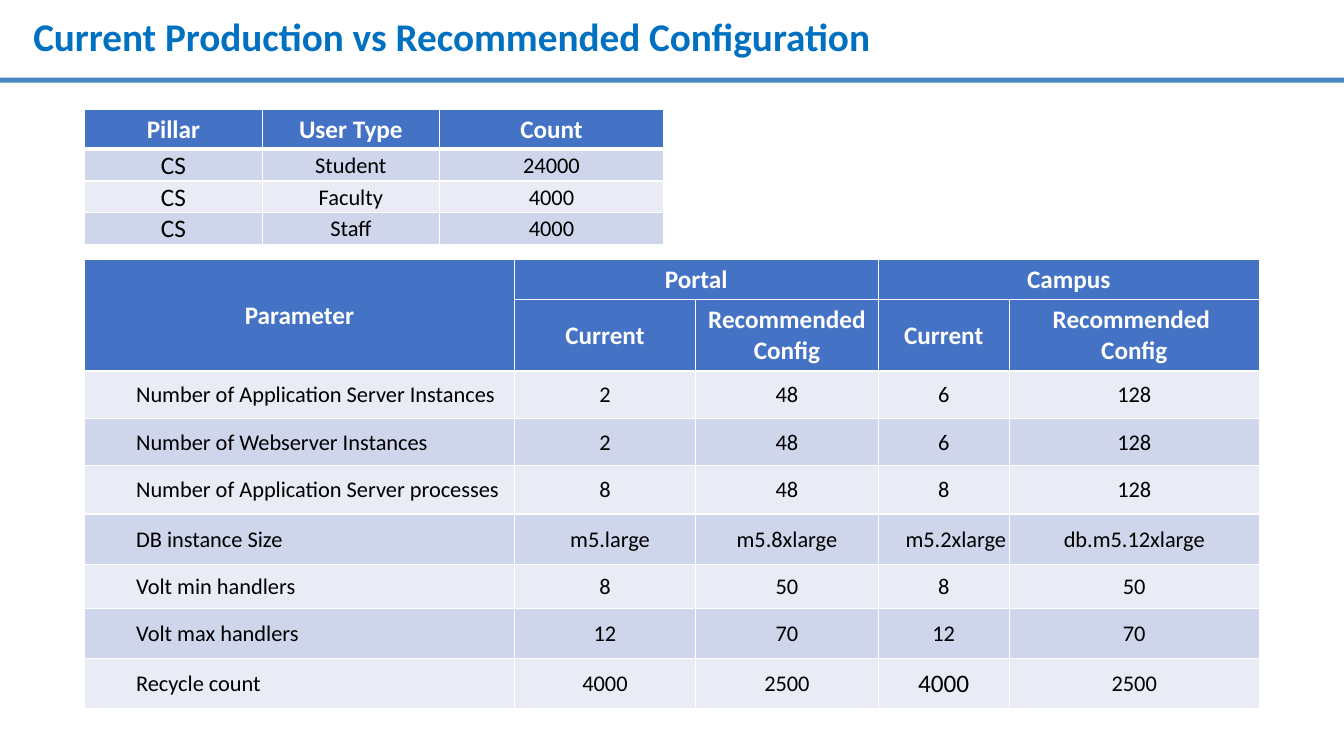
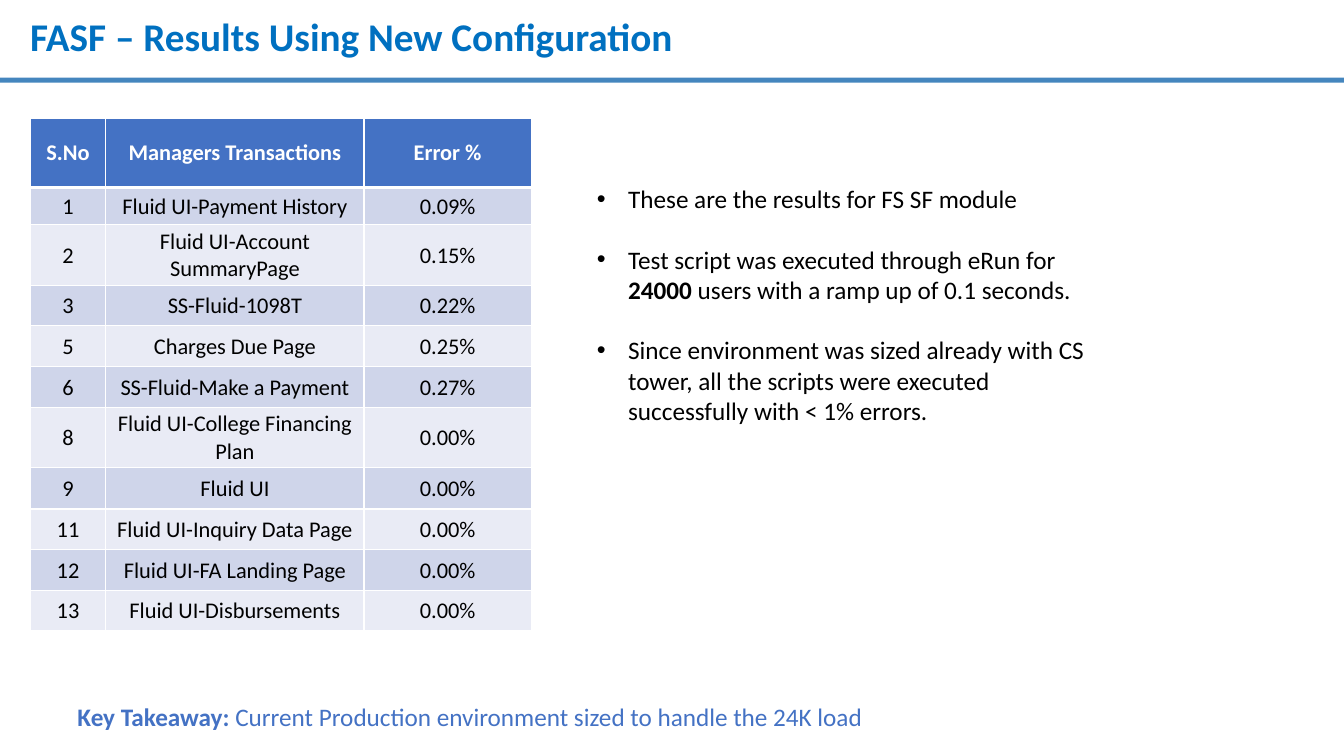
from dataclasses import dataclass

from lxml.etree import SubElement
from pptx import Presentation
from pptx.dml.color import RGBColor as RGB
from pptx.enum.shapes import MSO_SHAPE as SHAPE
from pptx.enum.text import MSO_ANCHOR as ANCHOR, MSO_AUTO_SIZE as AUTO, PP_ALIGN as ALIGN
from pptx.oxml.ns import qn
from pptx.util import Inches, Pt


@dataclass(frozen=True)
class Theme:
    font: str = "Calibri"
    title: RGB = RGB(0x00, 0x70, 0xC0)
    band: RGB = RGB(0x45, 0x86, 0xBE)
    accent: RGB = RGB(0x44, 0x72, 0xC4)
    stripe_dark: RGB = RGB(0xCF, 0xD5, 0xEA)
    stripe_light: RGB = RGB(0xE9, 0xEB, 0xF5)
    white: RGB = RGB(0xFF, 0xFF, 0xFF)
    black: RGB = RGB(0x00, 0x00, 0x00)
    title_size: int = 28
    text_size: int = 18
    cell_size: int = 16


THEME = Theme()
TITLE_ONLY, TITLE_AND_CONTENT = 5, 1

USER_COUNTS = [
    ("Pillar", "User Type", "Count"),
    ("CS", "Student", "24000"),
    ("CS", "Faculty", "4000"),
    ("CS", "Staff", "4000"),
]
CONFIGURATION = [
    ("Parameter", "Portal", "", "Campus", ""),
    ("", "Current", "Recommended Config", "Current", "Recommended \nConfig"),
    ("Number of Application Server Instances", "2", "48", "6", "128"),
    ("Number of Webserver Instances", "2", "48", "6", "128"),
    ("Number of Application Server processes", "8", "48", "8", "128"),
    ("DB instance Size", "m5.large", "m5.8xlarge", "m5.2xlarge", "db.m5.12xlarge"),
    ("Volt min handlers", "8", "50", "8", "50"),
    ("Volt max handlers", "12", "70", "12", "70"),
    ("Recycle count", "4000", "2500", "4000", "2500"),
]
ERROR_RATES = [
    ("S.No", "Managers Transactions", "Error %"),
    ("1", "Fluid UI-Payment History", "0.09%"),
    ("2", "Fluid UI-Account SummaryPage", "0.15%"),
    ("3", "SS-Fluid-1098T", "0.22%"),
    ("5", "Charges Due Page", "0.25%"),
    ("6", "SS-Fluid-Make a Payment", "0.27%"),
    ("8", "Fluid UI-College Financing Plan", "0.00%"),
    ("9", "Fluid UI", "0.00%"),
    ("11", "Fluid UI-Inquiry Data Page", "0.00%"),
    ("12", "Fluid UI-FA Landing Page", "0.00%"),
    ("13", "Fluid UI-Disbursements", "0.00%"),
]
# Each finding is a list of (text, bold) runs.
FINDINGS = [
    [("These are the results for FS SF module", False)],
    [("Test script was executed through eRun for ", False), ("24000", True),
     (" users with a ramp up of 0.1 seconds.", False)],
    [("Since environment was sized already with CS tower, all the scripts were "
      "executed successfully with < 1% errors.", False)],
]
TAKEAWAY = [("Key Takeaway: ", True),
            ("Current Production environment sized to handle the 24K load", False)]


def style(paragraph, size, color, bold=None):
    font = paragraph.font
    font.name, font.size, font.bold = THEME.font, Pt(size), bold
    font.color.rgb = color


def indent(paragraph, left, first=0):
    props = paragraph._p.get_or_add_pPr()
    props.set("marL", str(Inches(left)))
    props.set("indent", str(Inches(first)))
    return props


def add_runs(paragraph, runs):
    for text, bold in runs:
        run = paragraph.add_run()
        run.text = text
        run.font.bold = bold


def place(shape, box):
    shape.left, shape.top, shape.width, shape.height = map(Inches, box)


def add_master_header(prs, slide):
    """Draw the title band and its lower edge, and move both to the master."""
    bands = ((0.27, 0.55, THEME.band), (0, 0.77, THEME.white))
    for i, (top, height, color) in enumerate(bands):
        band = slide.shapes.add_shape(
            SHAPE.RECTANGLE, 0, Inches(top), prs.slide_width, Inches(height))
        band.shadow.inherit = False
        band.fill.solid()
        band.fill.fore_color.rgb = color
        band.line.fill.background()
        band.element.nvSpPr.cNvPr.set("id", str(50 + i))
        prs.slide_master.shapes.element.insert(2 + i, band.element)


def set_title(slide, text, left):
    title = slide.shapes.title
    place(title, (left, 0.11, 10.79, 0.56))
    frame = title.text_frame
    frame.text = text
    frame.auto_size = AUTO.NONE
    frame.vertical_anchor = ANCHOR.MIDDLE
    frame.margin_left = frame.margin_right = Inches(0.07)
    frame.margin_top = frame.margin_bottom = Inches(0.04)
    heading = frame.paragraphs[0]
    heading.alignment = ALIGN.LEFT
    heading.line_spacing = 0.9
    style(heading, THEME.title_size, THEME.title, True)


def add_borders(cell, bottom):
    props = cell._tc.get_or_add_tcPr()
    for side, width in (("L", 1), ("R", 1), ("T", 1), ("B", bottom)):
        line = SubElement(props, qn(f"a:ln{side}"), w=str(Pt(width)))
        SubElement(SubElement(line, qn("a:solidFill")), qn("a:srgbClr"), val=str(THEME.white))


def add_grid(slide, left, top, widths, heights, rows, header_rows=1, header_size=THEME.text_size,
             header_rule=3, large=(), indents=None):
    """Add a striped table.

    large holds the (row, column) of body cells in the larger size;
    indents maps (row, column) to a left indent in inches.
    """
    indents = indents or {}
    grid = slide.shapes.add_table(
        len(rows), len(widths), Inches(left), Inches(top),
        Inches(sum(widths)), Inches(sum(heights))).table
    for column, width in zip(grid.columns, widths):
        column.width = Inches(width)
    for grid_row, height in zip(grid.rows, heights):
        grid_row.height = Inches(height)
    for r, row in enumerate(rows):
        header = r < header_rows
        for c, text in enumerate(row):
            cell = grid.cell(r, c)
            add_borders(cell, header_rule if header else 1)
            cell.fill.solid()
            stripe = THEME.stripe_dark if r % 2 else THEME.stripe_light
            cell.fill.fore_color.rgb = THEME.accent if header else stripe
            cell.vertical_anchor = ANCHOR.MIDDLE
            cell.margin_left = cell.margin_right = cell.margin_top = Inches(0.01)
            cell.margin_bottom = 0
            cell.text_frame.text = text
            body_size = THEME.text_size if (r, c) in large else THEME.cell_size
            for paragraph in cell.text_frame.paragraphs:
                paragraph.alignment = ALIGN.CENTER
                if (r, c) in indents:
                    indent(paragraph, indents[r, c])
                style(paragraph, header_size if header else body_size,
                      THEME.white if header else THEME.black, header)
    return grid


def add_configuration_grid(slide, left, top):
    body = range(2, len(CONFIGURATION))
    grid = add_grid(
        slide, left, top, [4.26, 1.8, 1.81, 1.3, 2.48],
        [0.4, 0.71, 0.47, 0.47, 0.48, 0.5, 0.44, 0.49, 0.5], CONFIGURATION,
        header_rows=2, header_rule=1, large=[(8, 3)],
        indents={**{(r, 0): 0.5 for r in body}, (5, 1): 0.1, (5, 3): 0.24})
    for start, end in (((0, 0), (1, 0)), ((0, 1), (0, 2)), ((0, 3), (0, 4))):
        grid.cell(*start).merge(grid.cell(*end))
    for r in body:
        grid.cell(r, 0).text_frame.paragraphs[0].alignment = ALIGN.LEFT


def fill_findings(body, box):
    place(body, box)
    frame = body.text_frame
    frame.auto_size = AUTO.NONE
    for i, runs in enumerate(FINDINGS):
        finding = frame.add_paragraph() if i else frame.paragraphs[0]
        SubElement(indent(finding, 0.31, -0.31), qn("a:buChar"), char="•")
        finding.space_before = Pt(21.6 if i else 0)
        style(finding, THEME.text_size, THEME.black)
        add_runs(finding, runs)


def add_takeaway(slide, box):
    frame = slide.shapes.add_textbox(*map(Inches, box)).text_frame
    frame.word_wrap = True
    takeaway = frame.paragraphs[0]
    takeaway.line_spacing = 1.5
    style(takeaway, THEME.text_size, THEME.accent)
    add_runs(takeaway, TAKEAWAY)


def build_configuration_slide(slide):
    set_title(slide, "Current Production vs Recommended Configuration", 0.26)
    add_grid(slide, 0.84, 1.09, [1.76, 1.76, 2.22], [0.39] + [0.31] * 3, USER_COUNTS,
             large=[(r, 0) for r in range(1, len(USER_COUNTS))])
    add_configuration_grid(slide, 0.84, 2.57)


def build_results_slide(slide):
    set_title(slide, "FASF – Results Using New Configuration", 0.23)
    heights = [0.69, 0.37, 0.6, 0.4, 0.41, 0.4, 0.6, 0.41, 0.4, 0.41, 0.4]
    add_grid(slide, 0.3, 1.17, [0.75, 2.56, 1.66], heights, ERROR_RATES,
             header_size=THEME.cell_size)
    fill_findings(slide.placeholders[1], (5.82, 1.77, 5.21, 2.52))
    add_takeaway(slide, (0.67, 6.76, 11.76, 0.51))


def main():
    prs = Presentation()
    prs.slide_width, prs.slide_height = Inches(13.33), Inches(7.5)
    configuration = prs.slides.add_slide(prs.slide_layouts[TITLE_ONLY])
    results = prs.slides.add_slide(prs.slide_layouts[TITLE_AND_CONTENT])
    add_master_header(prs, configuration)
    build_configuration_slide(configuration)
    build_results_slide(results)
    prs.save("out.pptx")


if __name__ == "__main__":
    main()
